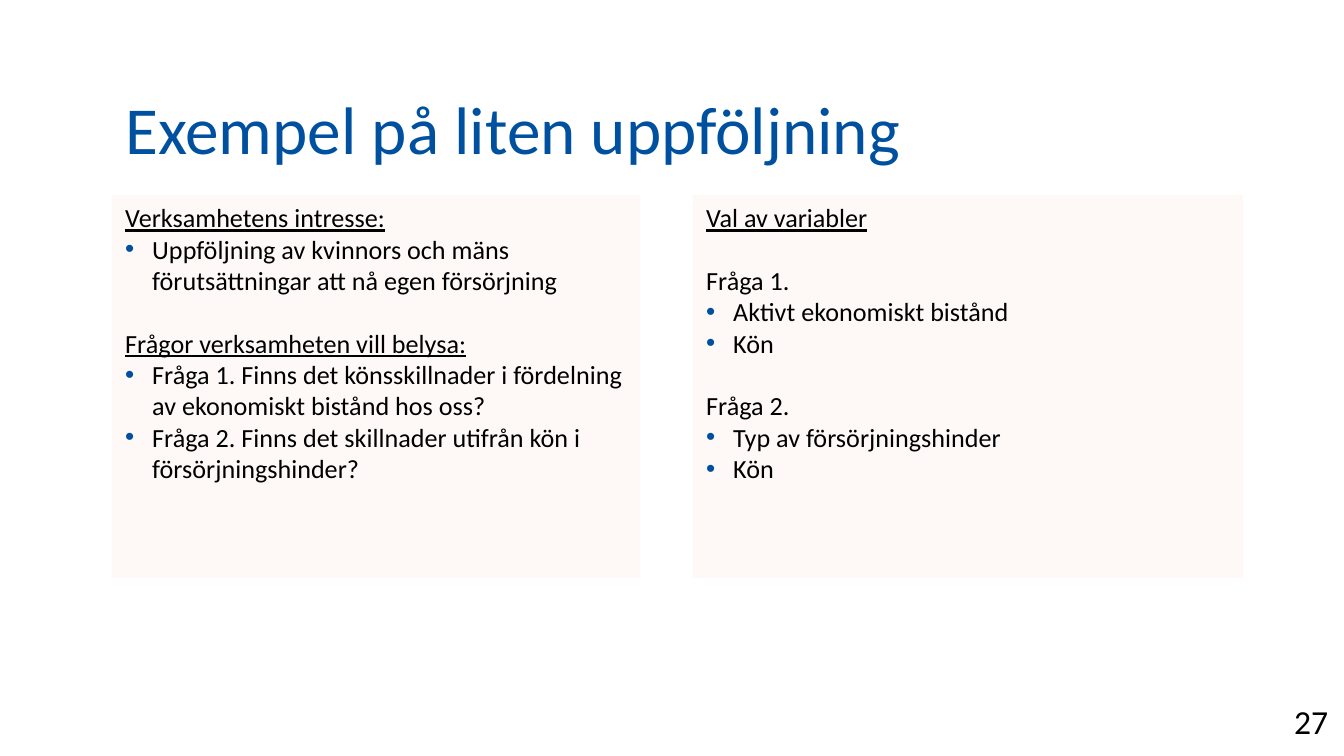
from lxml import etree
from pptx import Presentation
from pptx import util as u
from pptx.dml.color import RGBColor
from pptx.enum import shapes, text
from pptx.oxml.ns import qn

SCALE = 914400 / 134.4
FONT = "Calibri"
COLORS = {"blue": "0050A0", "black": "000000", "panel": "FEF8F7"}
LINE = u.Pt(16.8)
INDENT = 27

INTEREST = [
    ("Verksamhetens intresse:", ["Uppföljning av kvinnors och mäns förutsättningar att nå egen försörjning"]),
    ("Frågor verksamheten vill belysa:", [
        "Fråga 1. Finns det könsskillnader i fördelning av ekonomiskt bistånd hos oss?",
        "Fråga 2. Finns det skillnader utifrån kön i försörjningshinder?",
    ]),
]
VARIABLES = [
    ("Val av variabler", []),
    ("Fråga 1. ", ["Aktivt ekonomiskt bistånd ", "Kön"]),
    ("Fråga 2.", ["Typ av försörjningshinder", "Kön"]),
]


def px(value):
    return u.Emu(round(value * SCALE))


def color(name):
    return RGBColor.from_string(COLORS[name])


def style(para, size, name="black", underline=False):
    para.font.name = FONT
    para.font.size = u.Pt(size)
    para.font.color.rgb = color(name)
    para.font.underline = underline


def add_bullet(para):
    props = para._p.get_or_add_pPr()
    props.set("marL", str(px(INDENT)))
    props.set("indent", str(-px(INDENT)))
    bullet_color = etree.SubElement(props, qn("a:buClr"))
    etree.SubElement(bullet_color, qn("a:srgbClr"), val=COLORS["blue"])
    etree.SubElement(props, qn("a:buFont"), typeface="Arial")
    etree.SubElement(props, qn("a:buChar"), char="•")


def add_title(page, box, words):
    title = page.shapes.title
    title.left, title.top, title.width, title.height = map(px, box)
    frame = title.text_frame
    frame.text = words
    frame.word_wrap = True
    frame.auto_size = text.MSO_AUTO_SIZE.NONE
    frame.vertical_anchor = text.MSO_ANCHOR.MIDDLE
    para = frame.paragraphs[0]
    para.alignment = text.PP_ALIGN.LEFT
    style(para, 36, "blue")


def add_panel(page, box, groups, underlined):
    panel = page.shapes.add_shape(shapes.MSO_SHAPE.RECTANGLE, *map(px, box))
    panel.shadow.inherit = False
    panel.fill.solid()
    panel.fill.fore_color.rgb = color("panel")
    panel.line.fill.background()
    frame = panel.text_frame
    frame.word_wrap = True
    frame.vertical_anchor = text.MSO_ANCHOR.TOP
    for index, (heading, bullets) in enumerate(groups):
        for row, words in enumerate([heading, *bullets]):
            first = index == 0 and row == 0
            para = frame.paragraphs[0] if first else frame.add_paragraph()
            para.text = words
            para.alignment = text.PP_ALIGN.LEFT
            para.line_spacing = LINE
            para.space_before = LINE if index and row == 0 else u.Pt(0)
            if row:
                add_bullet(para)
            style(para, 14, underline=row == 0 and index < underlined)


def add_page_number(page, box, number):
    label = page.shapes.add_textbox(*map(px, box))
    label.text_frame.word_wrap = True
    para = label.text_frame.paragraphs[0]
    para.text = number
    style(para, 18)


def main():
    deck = Presentation()
    deck.slide_width, deck.slide_height = px(1344), px(756)
    page = deck.slides.add_slide(deck.slide_layouts[5])
    add_title(page, (112, 85, 1133, 86), "Exempel på liten uppföljning")
    add_panel(page, (112, 195, 528, 383), INTEREST, underlined=2)
    add_page_number(page, (1281, 694, 63, 30), "27")
    add_panel(page, (693, 195, 550, 383), VARIABLES, underlined=1)
    deck.save("out.pptx")


if __name__ == "__main__":
    main()
